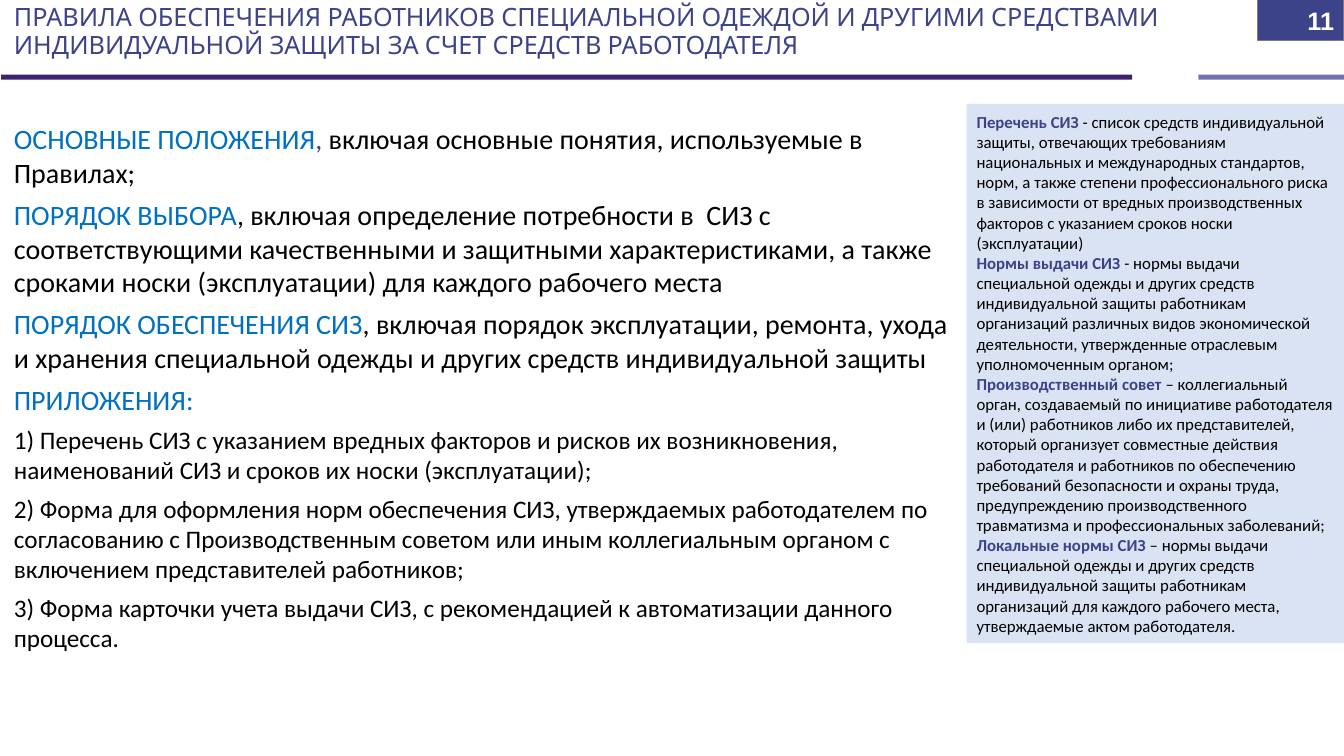
import pptx
import pptx.dml.color
import pptx.enum.shapes
import pptx.enum.text
import pptx.util
from pptx.util import Cm

# Content: each paragraph is a list of (style, text) runs
TITLE = [[("title", "ПРАВИЛА ОБЕСПЕЧЕНИЯ РАБОТНИКОВ СПЕЦИАЛЬНОЙ ОДЕЖДОЙ И ДРУГИМИ СРЕДСТВАМИ "
           "ИНДИВИДУАЛЬНОЙ ЗАЩИТЫ ЗА СЧЕТ СРЕДСТВ РАБОТОДАТЕЛЯ")]]
PAGE_NUMBER = [[("number", "11")]]
SECTIONS = [
    [("heading", "ОСНОВНЫЕ ПОЛОЖЕНИЯ"), ("comma", ", "),
     ("body", "включая основные понятия, используемые в Правилах;")],
    [("heading", "ПОРЯДОК ВЫБОРА"),
     ("body", ", включая определение потребности в  СИЗ с соответствующими качественными и защитными "
      "характеристиками, а также сроками носки (эксплуатации) для каждого рабочего места")],
    [("heading", "ПОРЯДОК ОБЕСПЕЧЕНИЯ СИЗ"),
     ("body", ", включая порядок эксплуатации, ремонта, ухода и хранения специальной одежды и других "
      "средств индивидуальной защиты")],
    [("heading", "ПРИЛОЖЕНИЯ:")],
    [("appendix", "1) Перечень СИЗ с указанием вредных факторов и рисков их возникновения, "
      "наименований СИЗ и сроков их носки (эксплуатации);")],
    [("appendix", "2) Форма для оформления норм обеспечения СИЗ, утверждаемых работодателем по "
      "согласованию с Производственным советом или иным коллегиальным органом с включением "
      "представителей работников;")],
    [("appendix", "3) Форма карточки учета выдачи СИЗ, с рекомендацией к автоматизации данного процесса.")],
]
DEFINITIONS = [
    ("Перечень СИЗ ", "- список средств индивидуальной защиты, отвечающих требованиям национальных и "
     "международных стандартов, норм, а также степени профессионального риска в зависимости от вредных "
     "производственных факторов с указанием сроков носки (эксплуатации)"),
    ("Нормы выдачи СИЗ ", "- нормы выдачи специальной одежды и других средств индивидуальной защиты "
     "работникам организаций различных видов экономической деятельности, утвержденные отраслевым "
     "уполномоченным органом;"),
    ("Производственный совет ", "– коллегиальный орган, создаваемый по инициативе работодателя и (или) "
     "работников либо их представителей, который организует совместные действия работодателя и работников "
     "по обеспечению требований безопасности и охраны труда, предупреждению производственного травматизма "
     "и профессиональных заболеваний;"),
    ("Локальные нормы СИЗ ", "– нормы выдачи специальной одежды и других средств индивидуальной защиты "
     "работникам организаций для каждого рабочего места, утверждаемые актом работодателя."),
]

THEME = {
    "colours": {"dark_rule": "3E226F", "light_rule": "7371B3", "badge": "3C4388",
                "badge_line": "7C7C7C", "panel": "DAE3F3"},
    # font, size, colour, bold
    "styles": {
        "title": ("League Spartan", 18, "3C4388", False),
        "number": ("Arial", 18, "FFFFFF", True),
        "heading": ("Calibri", 20, "0070C0", False),
        "comma": ("Calibri", 20, "3C4388", False),
        "body": ("Calibri", 20, "000000", False),
        "appendix": ("Calibri", 18, "000000", False),
        "term": ("Calibri", 12, "3C4388", True),
        "definition": ("Calibri", 12, "000000", False),
    },
}
ALIGN = pptx.enum.text.PP_ALIGN
ANCHOR = pptx.enum.text.MSO_ANCHOR

# Layout in centimetres
SLIDE_WIDTH, SLIDE_HEIGHT = 33.87, 19.05
LEFT = 0.1
RULE_TOP, RULE_HEIGHT = 1.88, 0.13
PANEL_LEFT, PANEL_TOP, PANEL_HEIGHT = 24.36, 2.62, 13.59
BADGE_LEFT, BADGE_HEIGHT = 31.69, 1.02
LIGHT_RULE_LEFT = 30.2
BODY_TOP_INSET = 1.19


def colour(code):
    return pptx.dml.color.RGBColor.from_string(code)


def write_text(shape, paragraphs, align=ALIGN.LEFT, anchor=ANCHOR.TOP,
               gap=0, line_spacing=1.0, top_inset=0.13):
    frame = shape.text_frame
    frame.word_wrap = True
    frame.auto_size = pptx.enum.text.MSO_AUTO_SIZE.NONE
    frame.vertical_anchor = anchor
    frame.margin_left = frame.margin_right = Cm(0.25)
    frame.margin_top, frame.margin_bottom = Cm(top_inset), Cm(0.13)
    for index, runs in enumerate(paragraphs):
        paragraph = frame.add_paragraph() if index else frame.paragraphs[0]
        paragraph.alignment = align
        paragraph.line_spacing = line_spacing
        paragraph.space_before = pptx.util.Pt(gap if index else 0)
        for style, text in runs:
            run = paragraph.add_run()
            run.text = text
            name, size, code, bold = THEME["styles"][style]
            run.font.name, run.font.size, run.font.bold = name, pptx.util.Pt(size), bold
            run.font.color.rgb = colour(code)


def add_box(slide, left, top, width, height, fill, line=None):
    shape = slide.shapes.add_shape(pptx.enum.shapes.MSO_SHAPE.RECTANGLE,
                                   Cm(left), Cm(top), Cm(width), Cm(height))
    shape.shadow.inherit = False
    shape.fill.solid()
    shape.fill.fore_color.rgb = colour(THEME["colours"][fill])
    if line:
        shape.line.color.rgb = colour(THEME["colours"][line])
        shape.line.width = pptx.util.Pt(0.75)
    else:
        shape.line.fill.background()
    return shape


def main():
    presentation = pptx.Presentation()
    presentation.slide_width, presentation.slide_height = Cm(SLIDE_WIDTH), Cm(SLIDE_HEIGHT)
    slide = presentation.slides.add_slide(presentation.slide_layouts[5])

    # Title
    title = slide.shapes.title
    title.left, title.top, title.width, title.height = Cm(LEFT), Cm(0), Cm(29.77), Cm(1.65)
    write_text(title, TITLE, line_spacing=0.9)

    # Main provisions
    body = slide.shapes.add_textbox(Cm(LEFT), Cm(RULE_TOP), Cm(PANEL_LEFT - LEFT), Cm(14.83))
    write_text(body, SECTIONS, gap=6, top_inset=BODY_TOP_INSET)

    # Page number and rules under the title
    badge = add_box(slide, BADGE_LEFT, 0, SLIDE_WIDTH - BADGE_LEFT, BADGE_HEIGHT, "badge", "badge_line")
    write_text(badge, PAGE_NUMBER, align=ALIGN.RIGHT, anchor=ANCHOR.MIDDLE)
    add_box(slide, 0.03, RULE_TOP, 28.5, RULE_HEIGHT, "dark_rule")
    add_box(slide, LIGHT_RULE_LEFT, RULE_TOP, SLIDE_WIDTH - LIGHT_RULE_LEFT, RULE_HEIGHT, "light_rule")

    # Definitions panel
    panel = add_box(slide, PANEL_LEFT, PANEL_TOP, SLIDE_WIDTH - PANEL_LEFT, PANEL_HEIGHT, "panel")
    definitions = [[("term", term), ("definition", meaning)] for term, meaning in DEFINITIONS]
    write_text(panel, definitions, anchor=ANCHOR.MIDDLE)

    presentation.save("out.pptx")


if __name__ == "__main__":
    main()
